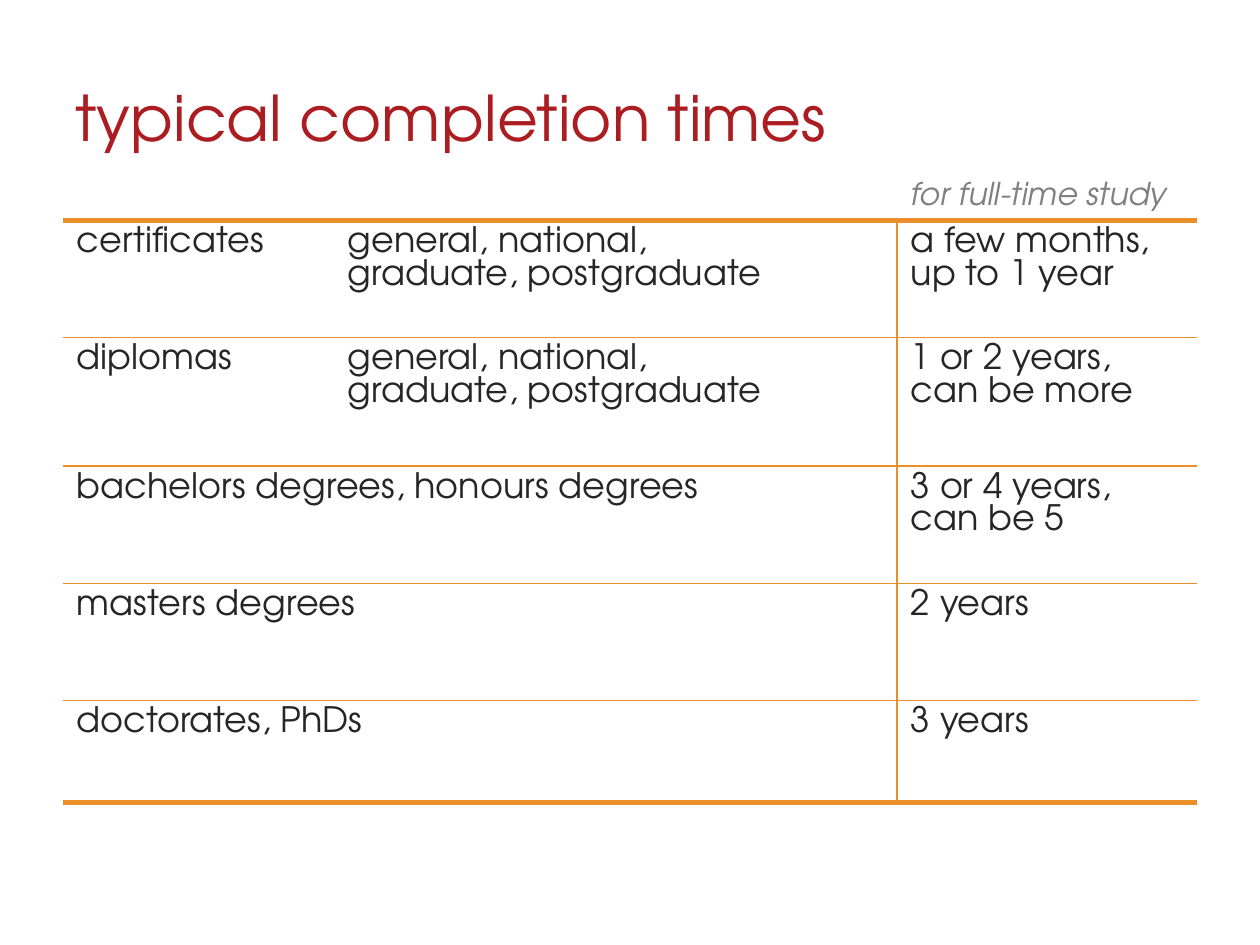
from lxml import etree
from pptx import Presentation
from pptx import util as u
from pptx.dml.color import RGBColor
from pptx.enum import text
from pptx.oxml.ns import qn

COLOURS = {"title": "AC1D22", "note": "808080", "body": "262626", "rule": "EB8F2B"}
FONT = "TeX Gyre Adventor"
WIDTH, HEIGHT = 10, 7.5
MARGIN = WIDTH * 0.05
TITLE = "typical completion times"
NOTE = "for full-time study"
LEVELS = "general, national, \ngraduate, postgraduate"
ROWS = [
    (0.93, "certificates\t" + LEVELS, "a few months, \nup to 1 year"),
    (1.02, "diplomas \t" + LEVELS, "1 or 2 years, \ncan be more"),
    (0.93, "bachelors degrees, honours degrees", "3 or 4 years, \ncan be 5"),
    (0.93, "masters degrees", "2 years"),
    (0.81, "doctorates, PhDs", "3 years"),
]
COLUMNS = [6.62, 2.38]
TABLE_TOP = 1.75
HANG = 2.15
THIN, THICK = 1, 3


def write(para, words, size, colour, italic=False):
    para.text = words
    para.font.name = FONT
    para.font.size = u.Pt(size)
    para.font.italic = italic
    para.font.color.rgb = RGBColor.from_string(COLOURS[colour])


def add_text(page, place, words, size, colour, italic=False):
    box = page.shapes.add_textbox(*map(u.Inches, place))
    box.text_frame.word_wrap = True
    box.text_frame.vertical_anchor = text.MSO_ANCHOR.MIDDLE
    write(box.text_frame.paragraphs[0], words, size, colour, italic)


def set_borders(cell, widths):
    props = cell._tc.get_or_add_tcPr()
    for position, (side, width) in enumerate(widths.items()):
        line = etree.Element(qn("a:" + side), w=str(u.Pt(width)))
        if width:
            fill = etree.SubElement(line, qn("a:solidFill"))
            etree.SubElement(fill, qn("a:srgbClr"), val=COLOURS["rule"])
        else:
            etree.SubElement(line, qn("a:noFill"))
        props.insert(position, line)


def add_times(page):
    frame = page.shapes.add_table(
        len(ROWS), len(COLUMNS), u.Inches(MARGIN), u.Inches(TABLE_TOP),
        u.Inches(sum(COLUMNS)), u.Inches(sum(row[0] for row in ROWS)))
    table = frame.table
    table.first_row = table.horz_banding = False
    for column, width in zip(table.columns, COLUMNS):
        column.width = u.Inches(width)
    for r, (height, *entries) in enumerate(ROWS):
        table.rows[r].height = u.Inches(height)
        for c, words in enumerate(entries):
            cell = table.cell(r, c)
            cell.margin_left = cell.margin_right = u.Inches(0.11)
            cell.margin_top = cell.margin_bottom = u.Inches(0.05)
            cell.fill.background()
            para = cell.text_frame.paragraphs[0]
            write(para, words, 20, "body")
            if "\t" in words:
                props = para._p.get_or_add_pPr()
                props.set("marL", str(u.Inches(HANG)))
                props.set("indent", str(-u.Inches(HANG)))
            set_borders(cell, {
                "lnL": THIN if c else 0,
                "lnR": 0 if c else THIN,
                "lnT": THIN if r else THICK,
                "lnB": THICK if r == len(ROWS) - 1 else THIN,
            })


def main():
    deck = Presentation()
    deck.slide_width, deck.slide_height = u.Inches(WIDTH), u.Inches(HEIGHT)
    page = deck.slides.add_slide(deck.slide_layouts[6])
    add_text(page, (MARGIN, 0.3, WIDTH - 2 * MARGIN, 1.25), TITLE, 36, "title")
    add_times(page)
    add_text(page, (7.13, 1.33, 2.83, 0.4), NOTE, 18, "note", True)
    deck.save("out.pptx")


if __name__ == "__main__":
    main()
